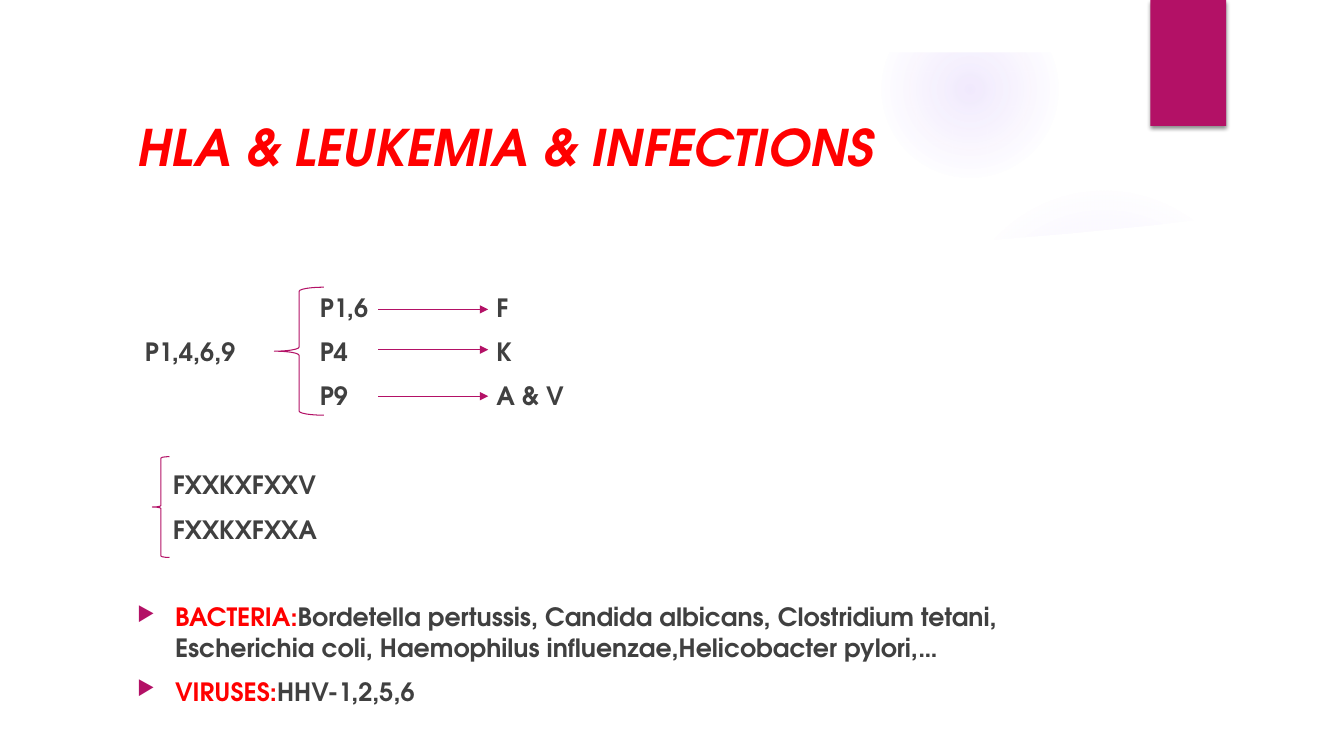
from lxml import etree
from pptx import Presentation
from pptx import util as u
from pptx.dml.color import RGBColor
from pptx.enum import shapes, text
from pptx.oxml.ns import nsdecls, qn

COLORS = {"accent": "B31166", "red": "FF0000", "body": "404040",
          "white": "FFFFFF", "glow": "9B6BF2", "shadow": "000000"}
FONT = "TeX Gyre Adventor"
MARGIN = 7.2
ROW = 31.7


def color(name):
    """Return the named colour."""
    return RGBColor.from_string(COLORS[name])


def xml(parent, markup, index=None):
    """Put a drawing element into the parent, last unless an index is given."""
    tag, rest = markup.split(" ", 1)
    element = etree.fromstring(f"{tag} {nsdecls('a')} {rest}")
    parent.insert(len(parent) if index is None else index, element)


def style_flat(shape, fill=None):
    """Remove shadow and outline from a shape and fill it."""
    shape.shadow.inherit = False
    shape.line.fill.background()
    if fill:
        shape.fill.solid()
        shape.fill.fore_color.rgb = color(fill)
    return shape


def add_shape(slide, kind, box, fill=None):
    """Add a flat preset shape without outline."""
    return style_flat(slide.shapes.add_shape(kind, *map(u.Pt, box)), fill)


def add_glow(slide, box, stops):
    """Add a circle that fades out from its centre."""
    circle = add_shape(slide, shapes.MSO_SHAPE.OVAL, box)
    marks = "".join(
        f'<a:gs pos="{position * 1000}"><a:srgbClr val="{COLORS["glow"]}">'
        f'<a:alpha val="{alpha * 1000}"/></a:srgbClr></a:gs>'
        for position, alpha in stops)
    xml(circle._element.spPr,
        f'<a:gradFill rotWithShape="1"><a:gsLst>{marks}</a:gsLst><a:path path="circle">'
        '<a:fillToRect l="50000" t="50000" r="50000" b="50000"/></a:path></a:gradFill>', 2)


def add_backdrop(slide, left, top, width):
    """Draw the glows, the white areas that crop them, and the ribbon."""
    add_glow(slide, (left + 677.5, top + 131.8, 221.8, 221.8), [(0, 7), (36, 6), (69, 0)])
    add_glow(slide, (left + 630, top + 0.7, 126, 126), [(0, 14), (36, 7), (73, 0)])
    curve = [(703, 172), (763, 167), (824, 161), (864, 156), (924, 147),
             (924, 504), (648, 504)]
    builder = slide.shapes.build_freeform(u.Pt(left + 648), u.Pt(top + 175))
    builder.add_line_segments([(u.Pt(left + x), u.Pt(top + y)) for x, y in curve])
    style_flat(builder.convert_to_shape(), "white")
    rectangle = shapes.MSO_SHAPE.RECTANGLE
    add_shape(slide, rectangle, (left, top, width, 37.4), "white")
    ribbon = add_shape(slide, rectangle, (left + 821.8, top, 54, 90), "accent")
    xml(ribbon._element.spPr.find(qn("a:effectLst")),
        '<a:outerShdw blurRad="38100" dist="25400" dir="5400000" rotWithShape="0">'
        f'<a:srgbClr val="{COLORS["shadow"]}"><a:alpha val="45000"/></a:srgbClr></a:outerShdw>')


def add_text_box(slide, box, anchor=text.MSO_ANCHOR.TOP):
    """Add a wrapping text box and return its text frame."""
    frame = slide.shapes.add_textbox(*map(u.Pt, box)).text_frame
    frame.word_wrap = True
    frame.vertical_anchor = anchor
    return frame


def set_font(paragraph, size, name="body"):
    """Set the bold font of a paragraph."""
    font = paragraph.font
    font.name, font.size, font.bold = FONT, u.Pt(size), True
    font.color.rgb = color(name)


def add_title(slide, box):
    """Write the slide title."""
    paragraph = add_text_box(slide, box, text.MSO_ANCHOR.MIDDLE).paragraphs[0]
    paragraph.add_run().text = "HLA & LEUKEMIA & INFECTIONS"
    set_font(paragraph, 36, "red")
    paragraph.font.italic = True


def add_rows(slide, box, rows):
    """Write rows of space before, margin, indent, bullet elements and runs."""
    frame = add_text_box(slide, box)
    for number, (before, margin, indent, elements, runs) in enumerate(rows):
        paragraph = frame.add_paragraph() if number else frame.paragraphs[0]
        properties = paragraph._p.get_or_add_pPr()
        properties.set("marL", str(u.Pt(margin)))
        properties.set("indent", str(u.Pt(indent)))
        for element in elements:
            xml(properties, element)
        paragraph.space_before = u.Pt(before)
        set_font(paragraph, 18)
        for words, name in runs:
            run = paragraph.add_run()
            run.text = words
            if len(runs) > 1:
                run.font.color.rgb = color(name)


def add_pockets(slide, left, top):
    """Write the pocket columns and draw their brace and arrows."""
    columns = [(5.5, 1, 90, ["P1,4,6,9"]),
               (130.5, 0, 60, ["P1,6", "P4", "P9"]),
               (256.5, 0, 90, ["F", "K", "A & V"])]
    for x, row, width, labels in columns:
        rows = [(10 if number else 0, 0, 0, [], [(label, "body")])
                for number, label in enumerate(labels)]
        box = (left + x, top + row * ROW, width + 2 * MARGIN, len(labels) * ROW)
        add_rows(slide, box, rows)
    add_brace(slide, (left + 105.1, top, 35.3, 91.4))
    for y in (15.8, 44.6, 77.8):
        arrow = slide.shapes.add_connector(
            shapes.MSO_CONNECTOR.STRAIGHT, u.Pt(left + 179.3), u.Pt(top + y),
            u.Pt(left + 257.8), u.Pt(top + y))
        arrow.line.color.rgb = color("accent")
        arrow.line.width = u.Pt(0.75)
        xml(arrow.line._get_or_add_ln(), '<a:tailEnd type="triangle"/>')
        xml(arrow._element.spPr, "<a:effectLst />")


def add_motifs(slide, left, top, width, height):
    """Write the motifs with their brace and the pathogen bullets."""
    bullet = [f'<a:buClr ><a:srgbClr val="{COLORS["accent"]}"/></a:buClr>',
              '<a:buSzPct val="80000"/>', '<a:buChar char="▶"/>']
    add_rows(slide, (left, top, width, height), [
        (0, 25.5, 0, [], [("FXXKXFXXV", "body")]),
        (10, 25.5, 0, [], [("FXXKXFXXA", "body")]),
        (41, 27, -27, bullet, [
            ("BACTERIA:", "red"),
            ("Bordetella pertussis, Candida albicans, Clostridium tetani, "
             "Escherichia coli, Haemophilus influenzae,Helicobacter pylori,…", "body")]),
        (10, 27, -27, bullet, [("VIRUSES:", "red"), ("HHV-1,2,5,6", "body")]),
    ])
    add_brace(slide, (left + 18, top - 5.8, 12.2, 72))


def add_brace(slide, box):
    """Draw a thin left brace."""
    brace = add_shape(slide, shapes.MSO_SHAPE.LEFT_BRACE, box)
    brace.fill.background()
    brace.line.color.rgb = color("accent")
    brace.line.width = u.Pt(0.75)


def main():
    """Build and save the slide."""
    presentation = Presentation()
    presentation.slide_width, presentation.slide_height = u.Pt(960), u.Pt(540)
    slide = presentation.slides.add_slide(presentation.slide_layouts[6])
    left, top = 90.9, 205.2
    add_backdrop(slide, 0, 0, 960)
    add_title(slide, (left, 76.6, 689.8, 55.4))
    add_pockets(slide, left, top)
    add_motifs(slide, left, top + 4 * ROW, 694.8, 188.6)
    presentation.save("out.pptx")


if __name__ == "__main__":
    main()
